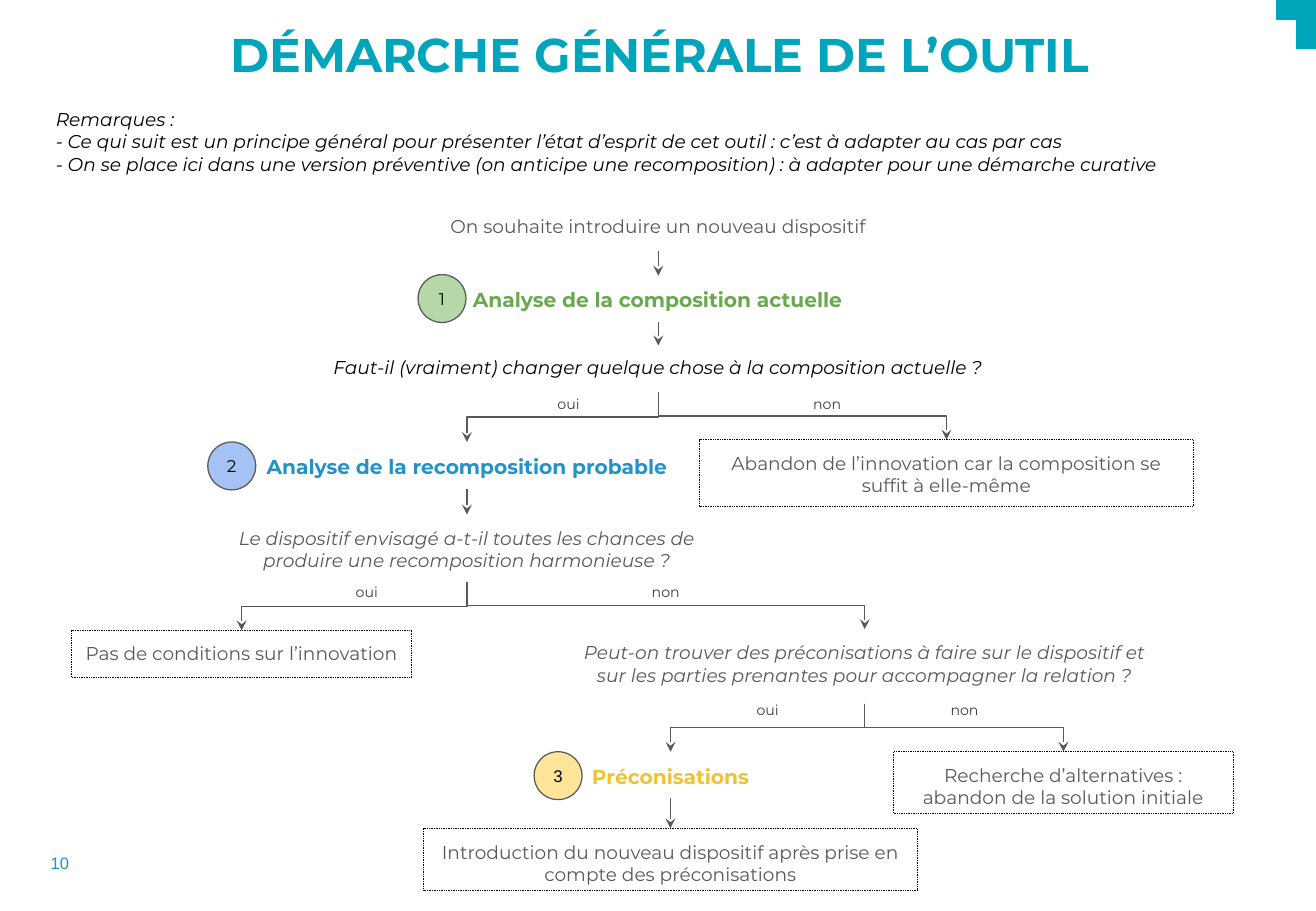
from dataclasses import dataclass

from lxml.etree import SubElement
from pptx import Presentation
from pptx.dml.color import RGBColor
from pptx.enum.dml import MSO_LINE
from pptx.enum.shapes import MSO_CONNECTOR, MSO_SHAPE
from pptx.enum.text import MSO_ANCHOR, PP_ALIGN
from pptx.oxml.ns import qn
from pptx.util import Pt


@dataclass(frozen=True)
class Theme:
    teal: str = "00A4BB"
    blue: str = "2392C9"
    green: str = "6AA84F"
    yellow: str = "F1C232"
    grey: str = "595959"
    label_grey: str = "3F3F3F"
    black: str = "000000"
    pale_green: str = "B6D7A8"
    pale_blue: str = "A4C2F4"
    pale_yellow: str = "FFE599"
    font: str = "Montserrat"
    number_font: str = "Arial"
    title_size: float = 28
    step_size: float = 12
    body_size: float = 11
    badge_size: float = 10
    page_size: float = 9.8
    label_size: float = 8.4
    inset: float = 7.2
    arrow_width: float = 0.75
    outcome_width: float = 0.5


THEME = Theme()


def apply(target, values):
    for name, value in values.items():
        setattr(target, name, value)


def write(shape, lines, size, color, font=THEME.font, bold=False, italic=False,
          align=PP_ALIGN.CENTER, anchor=MSO_ANCHOR.TOP,
          insets=(THEME.inset,) * 4):
    frame = shape.text_frame
    left, top, right, bottom = map(Pt, insets)
    apply(frame, {"word_wrap": True, "vertical_anchor": anchor,
                  "margin_left": left, "margin_top": top,
                  "margin_right": right, "margin_bottom": bottom})
    frame.text = "\n".join(lines)
    for paragraph in frame.paragraphs:
        paragraph.alignment = align
        apply(paragraph.font, {"name": font, "size": Pt(size),
                               "bold": bold, "italic": italic})
        paragraph.font.color.rgb = RGBColor.from_string(color)


def add_text(slide, left, top, width, height, lines, size, color, **style):
    shape = slide.shapes.add_textbox(Pt(left), Pt(top), Pt(width), Pt(height))
    write(shape, lines, size, color, **style)


def add_centred_text(slide, center, top, width, height, text, size, color, **style):
    add_text(slide, center - width / 2, top, width, height, [text], size, color, **style)


def fill_shape(shape, color):
    shape.fill.solid()
    shape.fill.fore_color.rgb = RGBColor.from_string(color)


def add_preset(slide, kind, left, top, width, height):
    shape = slide.shapes.add_shape(kind, Pt(left), Pt(top), Pt(width), Pt(height))
    shape.shadow.inherit = False
    return shape


def style_line(line, color, width):
    line.color.rgb = RGBColor.from_string(color)
    line.width = Pt(width)


def add_outcome(slide, center, top, width, height, text):
    shape = add_preset(slide, MSO_SHAPE.RECTANGLE, center - width / 2, top, width, height)
    shape.fill.background()
    style_line(shape.line, THEME.black, THEME.outcome_width)
    shape.line.dash_style = MSO_LINE.ROUND_DOT
    write(shape, [text], THEME.body_size, THEME.grey)


def add_badge(slide, center, top, text, color, font=THEME.font):
    diameter = 28.4
    shape = add_preset(slide, MSO_SHAPE.OVAL, center - diameter / 2, top,
                       diameter, diameter)
    fill_shape(shape, color)
    style_line(shape.line, THEME.grey, THEME.arrow_width)
    write(shape, [text], THEME.badge_size, THEME.black, font=font,
          anchor=MSO_ANCHOR.MIDDLE)


def add_arrow(slide, start_x, start_y, end_x, end_y):
    across, down = abs(end_x - start_x), end_y - start_y
    if across:
        left = (start_x + end_x - down) / 2
        top = (start_y + end_y - across) / 2
        connector = slide.shapes.add_connector(
            MSO_CONNECTOR.ELBOW, Pt(left), Pt(top), Pt(left + down), Pt(top + across))
        transform = connector._element.spPr.find(qn("a:xfrm"))
        if end_x < start_x:
            transform.set("rot", "5400000")
        else:
            transform.set("rot", "16200000")
            transform.set("flipH", "1")
    else:
        connector = slide.shapes.add_connector(
            MSO_CONNECTOR.STRAIGHT, Pt(start_x), Pt(start_y), Pt(end_x), Pt(end_y))
    style_line(connector.line, THEME.grey, THEME.arrow_width)
    SubElement(connector.line._get_or_add_ln(), qn("a:tailEnd"), type="stealth")
    SubElement(connector._element.spPr, qn("a:effectLst"))


def add_corner(slide, left, right, bottom, thickness):
    points = [(right, 0), (right, bottom), (right - thickness, bottom),
              (right - thickness, thickness), (left, thickness)]
    builder = slide.shapes.build_freeform(Pt(left), 0)
    builder.add_line_segments([(Pt(x), Pt(y)) for x, y in points], close=True)
    shape = builder.convert_to_shape()
    shape.shadow.inherit = False
    fill_shape(shape, THEME.teal)
    shape.line.fill.background()


def add_frame(slide):
    add_corner(slide, 756.4, 780, 29.2, 11.8)
    add_text(slide, 46, 15, 690, 53, ["DÉMARCHE GÉNÉRALE DE L’OUTIL"],
             THEME.title_size, THEME.teal, bold=True, insets=(7.2, 0, 7.2, 0))
    add_text(slide, 10, 502, 31, 19.4, ["10"], THEME.page_size, THEME.blue,
             font=THEME.number_font, align=PP_ALIGN.RIGHT,
             anchor=MSO_ANCHOR.MIDDLE, insets=(7.2, 3.6, 0, 3.6))
    add_text(slide, 26, 60.5, 677.5, 47.5, [
        "Remarques :",
        "- Ce qui suit est un principe général pour présenter l’état d’esprit de cet outil : "
        "c’est à adapter au cas par cas",
        "- On se place ici dans une version préventive (on anticipe une recomposition) : "
        "à adapter pour une démarche curative",
    ], THEME.body_size, THEME.black, italic=True, align=PP_ALIGN.LEFT,
        insets=(7.2, 3.6, 7.2, 3.6))


def main():
    presentation = Presentation()
    apply(presentation, {"slide_width": Pt(780), "slide_height": Pt(540)})
    slide = presentation.slides.add_slide(presentation.slide_layouts[6])
    add_frame(slide)

    trunk, probable, advice, final = 390.2, 276.8, 512.5, 397.4
    drop, no_condition, alternative = 561, 143.2, 630.3

    for arrow in [
        (trunk, 149, trunk, 163.4), (trunk, 190.8, trunk, 204.8),
        (probable, 290, probable, 305), (final, 473, final, 491),
        (trunk, 232.5, probable, 262), (trunk, 232.5, drop, 260.6),
        (probable, 345, no_condition, 373.6), (probable, 345, advice, 373),
        (advice, 417, final, 445.6), (advice, 417, alternative, 445.6),
    ]:
        add_arrow(slide, *arrow)

    for top, yes_center, no_center in [
        (229, 337, 490.3), (340.6, 217.4, 394.6), (410.4, 455, 571.7),
    ]:
        for center, answer in [(yes_center, "oui"), (no_center, "non")]:
            add_centred_text(slide, center, top, 35, 25.2, answer,
                             THEME.label_size, THEME.label_grey)

    add_centred_text(slide, trunk, 121, 292, 28,
                     "On souhaite introduire un nouveau dispositif",
                     THEME.body_size, THEME.grey)

    for center, top, width, text, color in [
        (trunk - 0.4, 163.4, 250, "Analyse de la composition actuelle", THEME.green),
        (probable, 262, 258.5, "Analyse de la recomposition probable", THEME.blue),
        (final, 445.6, 110, "Préconisations", THEME.yellow),
    ]:
        add_centred_text(slide, center, top, width, 28, text,
                         THEME.step_size, color, bold=True)

    for center, top, width, height, text, color in [
        (trunk, 204.6, 418, 28,
         "Faut-il (vraiment) changer quelque chose à la composition actuelle ?", THEME.black),
        (probable, 305, 292, 40,
         "Le dispositif envisagé a-t-il toutes les chances de produire une "
         "recomposition harmonieuse ?", THEME.grey),
        (advice, 373, 348, 43,
         "Peut-on trouver des préconisations à faire sur le dispositif et sur les parties "
         "prenantes pour accompagner la relation ?", THEME.grey),
    ]:
        add_centred_text(slide, center, top, width, height, text,
                         THEME.body_size, color, italic=True)

    for outcome in [
        (drop, 260.6, 292.4, 39.8,
         "Abandon de l’innovation car la composition se suffit à elle-même"),
        (no_condition, 373.6, 201.5, 28, "Pas de conditions sur l’innovation"),
        (alternative, 445.6, 201.5, 36.6,
         "Recherche d’alternatives : abandon de la solution initiale"),
        (final, 491, 292.4, 36.6,
         "Introduction du nouveau dispositif après prise en compte des préconisations"),
    ]:
        add_outcome(slide, *outcome)

    for badge in [
        (262, 162.8, "1", THEME.pale_green),
        (137.4, 262, "2", THEME.pale_blue),
        (330.8, 445.6, "3", THEME.pale_yellow, THEME.number_font),
    ]:
        add_badge(slide, *badge)

    presentation.save("out.pptx")


if __name__ == "__main__":
    main()
